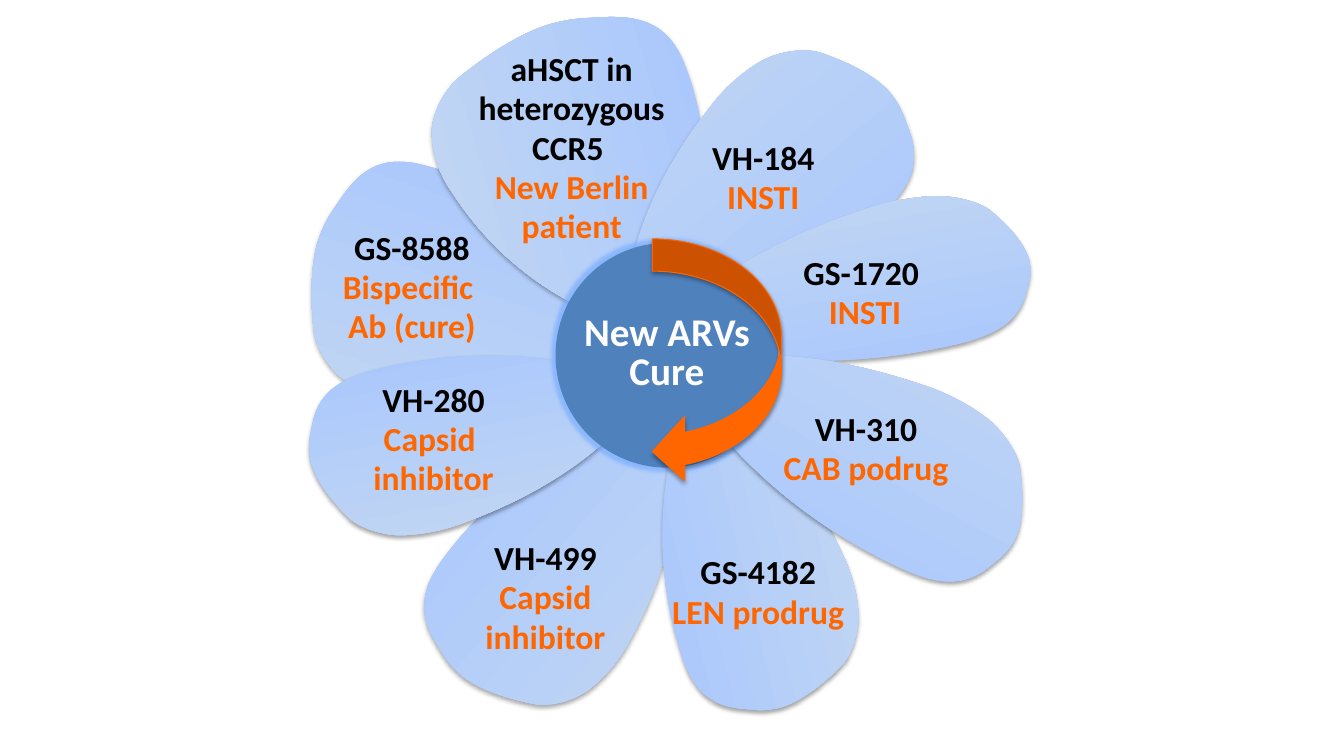
from lxml import etree
from pptx import Presentation
from pptx.dml.color import RGBColor
from pptx.enum.shapes import MSO_SHAPE as Kind
from pptx.enum.text import MSO_AUTO_SIZE as Fit, PP_ALIGN as Align
from pptx.oxml import parse_xml
from pptx.oxml.ns import qn
from pptx.util import Inches, Pt

NS = 'xmlns:a="http://schemas.openxmlformats.org/drawingml/2006/main"'
SHADOW = (f'<a:outerShdw {NS} blurRad="40000" dist="23000" dir="5400000" rotWithShape="0">'
          '<a:srgbClr val="000000"><a:alpha val="35000"/></a:srgbClr></a:outerShdw>')
GLOW = (f'<a:glow {NS} rad="63500"><a:srgbClr val="6FA8FF">'
        '<a:alpha val="60000"/></a:srgbClr></a:glow>')
ORANGE = "FF6600"


def rgb(code):
    return RGBColor.from_string(code)


def add_text(lines, box, size=24, wrap=True):
    """Centred bold lines, each given as (text, colour)."""
    frame = slide.shapes.add_textbox(*map(Inches, box)).text_frame
    frame.word_wrap = wrap
    frame.auto_size = Fit.SHAPE_TO_FIT_TEXT
    for i, (text, color) in enumerate(lines):
        para = frame.add_paragraph() if i else frame.paragraphs[0]
        para.alignment = Align.CENTER
        para.line_spacing = Pt(28)
        run = para.add_run()
        run.text = text
        font = run.font
        font.name, font.size, font.bold = "Calibri", Pt(size), True
        font.color.rgb = rgb(color)


deck = Presentation()
deck.slide_width, deck.slide_height = Inches(13.33), Inches(7.5)
slide = deck.slides.add_slide(deck.slide_layouts[6])

# One petal outline in thousandths of its box: a start, then three points per curve
START = (1000, 544)
CURVES = [
    (999, 633), (989, 664), (977, 727),
    (945, 895), (885, 963), (762, 975),
    (522, 1000), (303, 904), (111, 716),
    (0, 600), (11, 533), (95, 418),
    (234, 219), (400, 96), (588, 30),
    (650, 4), (723, 0), (786, 22),
    (836, 41), (894, 103), (920, 168),
    (960, 280), (1000, 430), START,
]

# Petals: left, top, width, height, rotation
PETALS = [
    (4.05, 4.46, 3.35, 2.04, 130.7),
    (3.04, 1.8, 3.22, 2.38, 199.2),
    (5.77, 4.46, 3.29, 1.89, 76.4),
    (3.06, 3.44, 3.46, 1.74, 169.4),
    (4.18, 0.46, 3.22, 2.72, 253.6),
    (5.67, 0.97, 3.51, 2.02, 320),
    (6.46, 2.09, 3.77, 1.56, 349.8),
    (6.54, 3.5, 3.78, 1.8, 28.1),
]
for left, top, width, height, turn in PETALS:
    scale = (Inches(width) / 1000, Inches(height) / 1000)
    pen = slide.shapes.build_freeform(*START, scale=scale)
    pen.add_line_segments(CURVES, close=True)
    petal = pen.convert_to_shape(Inches(left), Inches(top))
    petal.rotation = turn

    # Join each three segments into one Bezier curve
    steps = list(petal.element.iter(qn("a:lnTo")))
    for i in range(0, len(steps), 3):
        curve = etree.Element(qn("a:cubicBezTo"))
        steps[i].addprevious(curve)
        for step in steps[i:i + 3]:
            curve.append(step[0])
            step.getparent().remove(step)

    petal.fill.gradient()
    petal.fill.gradient_angle = 90
    for stop, color in zip(petal.fill.gradient_stops, ("A4C4FF", "C6D9F1")):
        stop.color.rgb = rgb(color)
    petal.line.fill.background()
    petal.shadow.inherit = False
    petal.element.spPr.find(qn("a:effectLst")).append(parse_xml(SHADOW))

# Hub
hub = slide.shapes.add_shape(Kind.OVAL, *map(Inches, (5.51, 2.41, 2.21, 2.23)))
hub.fill.solid()
hub.fill.fore_color.rgb = rgb("4F81BD")
hub.line.fill.background()
hub.shadow.inherit = False
hub.element.spPr.find(qn("a:effectLst")).append(parse_xml(GLOW))
add_text([("New ARVs", "FFFFFF"), ("Cure", "FFFFFF")],
         (5.68, 3.08, 1.87, 0.89), size=28, wrap=False)

# Petal labels: box, wrap, drug, then its class
LABELS = [
    ((6.56, 5.43, 1.92, 0.89), False, "GS-4182", "LEN prodrug"),
    ((3.29, 2.21, 1.59, 1.28), False, "GS-8588", "Bispecific ", "Ab (cure)"),
    ((4.64, 0.44, 2.06, 2.06), True, "aHSCT in heterozygous CCR5 ", "New Berlin patient"),
    ((6.54, 1.32, 2.06, 0.89), True, "VH-184", "INSTI"),
    ((7.55, 2.46, 2.06, 0.89), True, "GS-1720 ", "INSTI"),
    ((7.56, 4.01, 2.06, 0.89), True, "VH-310", "CAB podrug"),
    ((4.38, 5.29, 2.06, 1.28), True, "VH-499", "Capsid", "inhibitor"),
    ((3.27, 3.72, 2.06, 1.28), True, "VH-280", "Capsid ", "inhibitor"),
]
for box, wrap, drug, *group in LABELS:
    add_text([(drug, "000000")] + [(text, ORANGE) for text in group], box, wrap=wrap)

# Arrow around the hub
arrow = slide.shapes.add_shape(Kind.CURVED_LEFT_ARROW, *map(Inches, (6.47, 2.37, 1.28, 2.43)))
arrow.fill.solid()
arrow.fill.fore_color.rgb = rgb(ORANGE)
arrow.line.color.rgb = rgb(ORANGE)
arrow.line.width = Pt(0.75)
arrow.shadow.inherit = False
arrow.element.spPr.find(qn("a:effectLst")).append(parse_xml(SHADOW))

deck.save("out.pptx")
